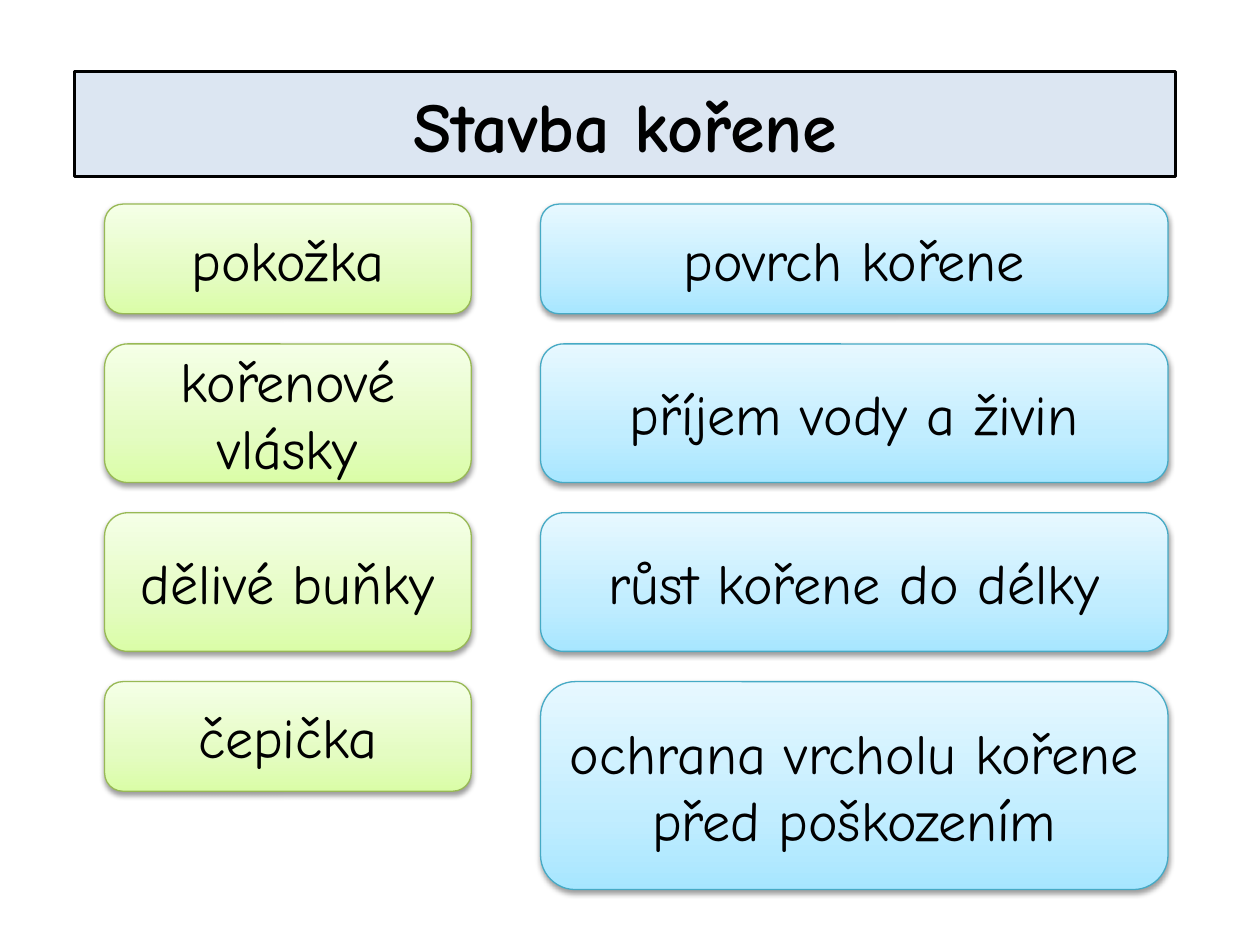
"""Build the slide on the structure of a root."""
from copy import deepcopy

from lxml import etree
from pptx import Presentation
from pptx.dml.color import RGBColor
from pptx.enum.shapes import MSO_SHAPE
from pptx.enum.text import MSO_ANCHOR, MSO_AUTO_SIZE, PP_ALIGN
from pptx.oxml.ns import qn
from pptx.util import Inches, Pt

ROUND = MSO_SHAPE.ROUNDED_RECTANGLE
MIDDLE = MSO_ANCHOR.MIDDLE
GROW = MSO_AUTO_SIZE.SHAPE_TO_FIT_TEXT
CENTER = PP_ALIGN.CENTER

GREEN = ("DAFDA7", "E4FCC2", "F5FFE7"), "98B955"
BLUE = ("A7E6FF", "C1EDFF", "E7F8FF"), "46AAC5"
STOPS = 0, 0.35, 1
TOP, GAP = 1.62, 0.24
ROWS = [
    ("pokožka", 0.87, "povrch kořene", 0.87),
    ("kořenové vlásky", 1.1, "příjem vody a živin", 1.1),
    ("dělivé buňky", 1.1, "růst kořene do délky", 1.1),
    ("čepička", 0.87, "ochrana vrcholu kořene před poškozením", 1.65),
]


def color(text):
    return RGBColor.from_string(text)


class Deck:
    def __init__(self, slide):
        self.slide = slide
        self.font = "Comic Neue"
        self.ink = color("000000")

    def label(self, shape, text, size, bold=False):
        frame = shape.text_frame
        frame.text = text
        frame.word_wrap = True
        frame.vertical_anchor = MIDDLE
        para = frame.paragraphs[0]
        para.alignment = CENTER
        font = para.runs[0].font
        font.name, font.size, font.bold = self.font, Pt(size), bold
        font.color.rgb = self.ink

    def title(self, text, left, top, width, height):
        shape = self.slide.shapes.title
        shape.left, shape.top = Inches(left), Inches(top)
        shape.width, shape.height = Inches(width), Inches(height)
        shape.fill.solid()
        shape.fill.fore_color.rgb = color("DCE6F2")
        shape.line.color.rgb = self.ink
        shape.line.width = Pt(2)
        self.label(shape, text, 40, True)
        shape.text_frame.auto_size = GROW

    def shade(self, shape, tints):
        fill = shape.fill
        fill.gradient()
        fill.gradient_angle = 90
        stops = shape._element.spPr.find(qn("a:gradFill")).find(qn("a:gsLst"))
        stops.append(deepcopy(stops[0]))
        for stop, place, tint in zip(fill.gradient_stops, STOPS, tints):
            stop.position = place
            stop.color.rgb = color(tint)

    def shadow(self, shape):
        shape.shadow.inherit = False
        effects = shape._element.spPr.find(qn("a:effectLst"))
        outer = etree.SubElement(effects, qn("a:outerShdw"), blurRad=str(Pt(3.1)),
                                 dist=str(Pt(1.6)), dir="5400000", rotWithShape="0")
        tone = etree.SubElement(outer, qn("a:srgbClr"), val="000000")
        etree.SubElement(tone, qn("a:alpha"), val="38000")

    def card(self, text, left, top, width, height, style):
        tints, edge = style
        shape = self.slide.shapes.add_shape(
            ROUND, Inches(left), Inches(top), Inches(width), Inches(height))
        self.shade(shape, tints)
        shape.line.color.rgb = color(edge)
        shape.line.width = Pt(0.75)
        self.shadow(shape)
        self.label(shape, text, 32)


def main():
    prs = Presentation()
    prs.slide_width, prs.slide_height = Inches(10), Inches(7.5)
    deck = Deck(prs.slides.add_slide(prs.slide_layouts[5]))
    deck.title("Stavba kořene", 0.59, 0.6, 8.74, 0.77)
    top = TOP
    for part, low, role, high in ROWS:
        deck.card(part, 0.83, top, 2.91, low, GREEN)
        deck.card(role, 4.29, top, 4.98, high, BLUE)
        top += low + GAP
    prs.save("out.pptx")


if __name__ == "__main__":
    main()
